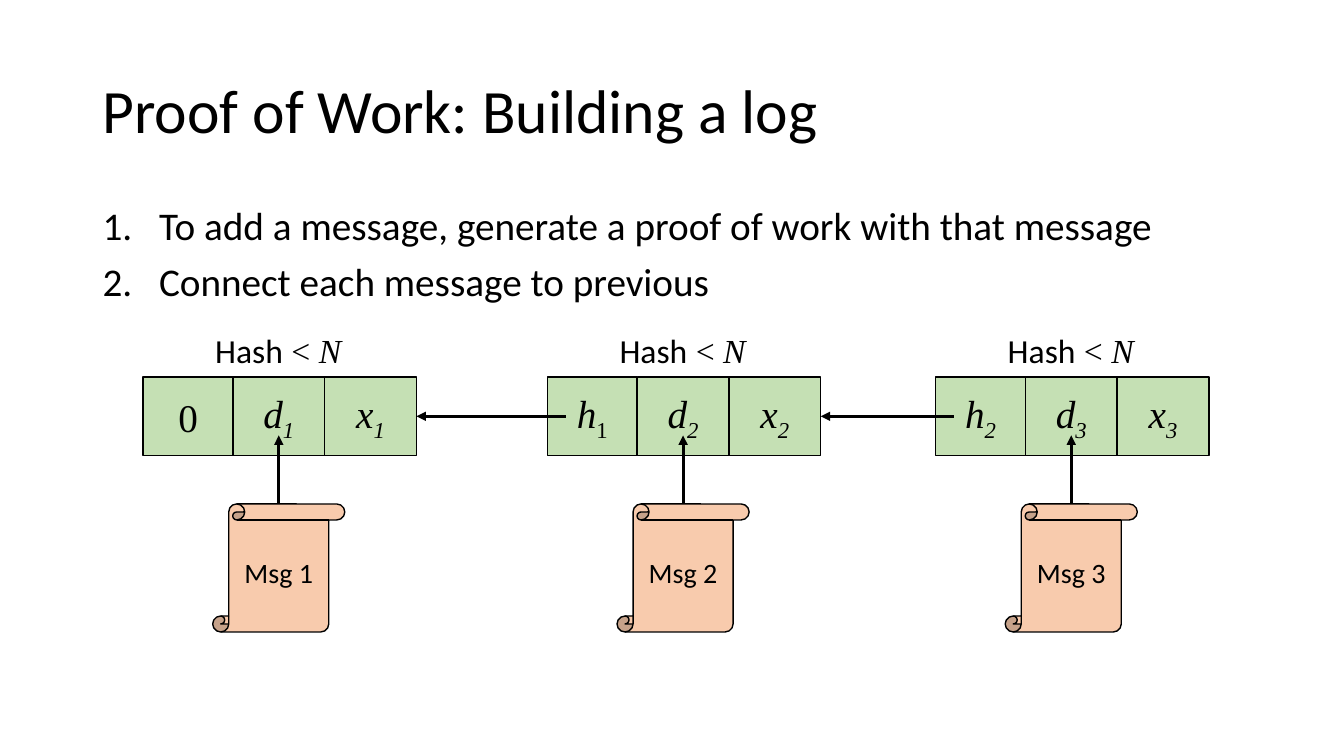
from lxml import etree
from pptx import Presentation
from pptx.dml.color import RGBColor
from pptx.enum.shapes import MSO_CONNECTOR, MSO_SHAPE
from pptx.enum.text import MSO_ANCHOR, PP_ALIGN
from pptx.oxml.ns import qn
from pptx.util import Inches, Pt

RECTANGLE = MSO_SHAPE.RECTANGLE
SCROLL = MSO_SHAPE.VERTICAL_SCROLL
STRAIGHT = MSO_CONNECTOR.STRAIGHT
MIDDLE, TOP = MSO_ANCHOR.MIDDLE, MSO_ANCHOR.TOP
CENTER, LEFT = PP_ALIGN.CENTER, PP_ALIGN.LEFT
TOP_SITE, RIGHT_SITE = 0, 3

THEME = {
    "ink": RGBColor(0, 0, 0),
    "cell": RGBColor(0xC5, 0xE0, 0xB4),
    "scroll": RGBColor(0xF8, 0xCB, 0xAD),
    "title": {"name": "Calibri", "size": Pt(44)},
    "body": {"name": "Calibri", "size": Pt(28)},
    "label": {"name": "Calibri", "size": Pt(24)},
    "message": {"name": "Calibri", "size": Pt(20)},
    "symbol": {"name": "Times New Roman", "size": Pt(28)},
    "outline": Pt(1),
    "arrow": Pt(2.25),
}
ITALIC = {"italic": True}
SUBSCRIPT = {"subscript": True}
SERIF = {"name": "Times New Roman"}

deck = Presentation()
deck.slide_width, deck.slide_height = Inches(13.33), Inches(7.5)
page = deck.slides.add_slide(deck.slide_layouts[6])


def add_box(place, paragraphs, style, anchor=MIDDLE, align=CENTER, wrap=True, preset=None, fill=None):
    """Add a preset shape, or a text box when no preset is given.

    Each paragraph is a list of (text, format values) spans.
    """
    area = [Inches(length) for length in place]
    if preset is None:
        box = page.shapes.add_textbox(*area)
    else:
        box = page.shapes.add_shape(preset, *area)
        box.shadow.inherit = False
        box.fill.solid()
        box.fill.fore_color.rgb = fill
        box.line.color.rgb = THEME["ink"]
        box.line.width = THEME["outline"]
    frame = box.text_frame
    frame.word_wrap = wrap
    frame.vertical_anchor = anchor
    for index, spans in enumerate(paragraphs):
        para = frame.paragraphs[0] if index == 0 else frame.add_paragraph()
        para.alignment = align
        for text, changes in spans:
            span = para.add_run()
            span.text = text
            span.font.color.rgb = THEME["ink"]
            for name, value in {**style, **changes}.items():
                if name == "subscript":
                    span._r.get_or_add_rPr().set("baseline", "-25000")
                else:
                    setattr(span.font, name, value)
    return box


def add_line(start, end, width, arrow=True):
    line = page.shapes.add_connector(STRAIGHT, *[Inches(length) for length in (*start, *end)])
    line.line.color.rgb = THEME["ink"]
    line.line.width = width
    if arrow:
        etree.SubElement(line.line._get_or_add_ln(), qn("a:tailEnd"), type="triangle")
    etree.SubElement(line._element.spPr, qn("a:effectLst"))
    return line


title = add_box((0.92, 0.4, 11.5, 1.45), [[("Proof of Work: Building a log", {})]],
                THEME["title"], align=LEFT)
title.text_frame.paragraphs[0].line_spacing = 0.9

steps = ["To add a message, generate a proof of work with that message",
         "Connect each message to previous"]
body = add_box((0.92, 2, 11.5, 4.76), [[(step, {})] for step in steps],
               THEME["body"], anchor=TOP, align=LEFT)
for para in body.text_frame.paragraphs:
    para.line_spacing = 0.9
    para.space_before = Pt(10)
    properties = para._p.get_or_add_pPr()
    properties.set("marL", str(Inches(0.56)))
    properties.set("indent", str(-Inches(0.56)))
    etree.SubElement(properties, qn("a:buFont"), typeface="+mj-lt")
    etree.SubElement(properties, qn("a:buAutoNum"), type="arabicPeriod")

# Each block: left edge of its data cell, and the spans of its link cell
blocks = [
    (2.31, [("0", {})]),
    (6.32, [("h", ITALIC), ("1", SUBSCRIPT)]),
    (10.17, [("h", ITALIC), ("2", {**ITALIC, **SUBSCRIPT})]),
]
ROW_TOP, ROW_HEIGHT = 3.74, 0.78
ROW_MIDDLE = ROW_TOP + ROW_HEIGHT / 2
DATA_WIDTH, LINK_WIDTH = 1.82, 0.89
SCROLL_TOP, SCROLL_WIDTH = 5, 1.31
hash_label = [("Hash", {}), (" < ", SERIF), ("N", {**SERIF, **ITALIC})]

previous = None
for number, (left, link_spans) in enumerate(blocks, start=1):
    data_cell = add_box((left, ROW_TOP, DATA_WIDTH, ROW_HEIGHT), [], THEME["symbol"],
                        preset=RECTANGLE, fill=THEME["cell"])
    scroll_left = left - 0.2
    scroll = add_box((scroll_left, SCROLL_TOP, SCROLL_WIDTH, 1.27), [[(f"Msg {number}", {})]],
                     THEME["message"], preset=SCROLL, fill=THEME["scroll"])
    divider = left + DATA_WIDTH / 2
    add_line((divider, ROW_TOP), (divider, ROW_TOP + ROW_HEIGHT), THEME["outline"], arrow=False)
    for letter, offset in (("d", 0.18), ("x", 1.09)):
        add_box((left + offset, 3.84, 0.55, 0.57),
                [[(letter, ITALIC), (str(number), {**ITALIC, **SUBSCRIPT})]], THEME["symbol"])
    message_x = scroll_left + SCROLL_WIDTH / 2
    message_arrow = add_line((message_x, SCROLL_TOP), (message_x, 4.32), THEME["arrow"])
    message_arrow.begin_connect(scroll, TOP_SITE)
    add_box((left - 0.28, 3.22, 1.46, 0.5), [hash_label], THEME["label"], anchor=TOP, wrap=False)

    link_left = left - LINK_WIDTH
    add_box((link_left, ROW_TOP, LINK_WIDTH, ROW_HEIGHT), [link_spans], THEME["symbol"],
            preset=RECTANGLE, fill=THEME["cell"])
    if previous is not None:
        previous_cell, previous_right = previous
        link_arrow = add_line((link_left + 0.18, ROW_MIDDLE), (previous_right, ROW_MIDDLE),
                              THEME["arrow"])
        link_arrow.end_connect(previous_cell, RIGHT_SITE)
    previous = data_cell, left + DATA_WIDTH

deck.save("out.pptx")
